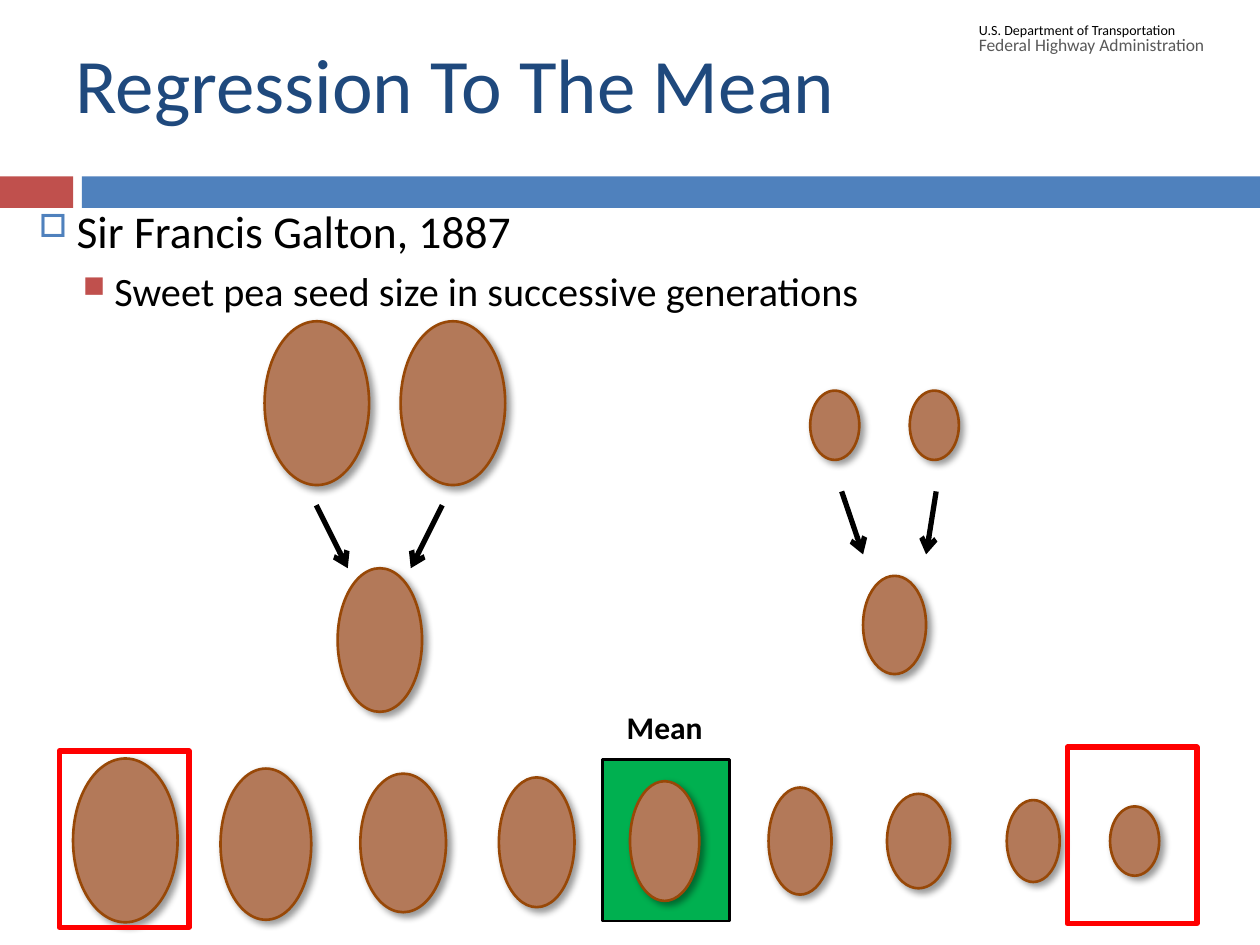
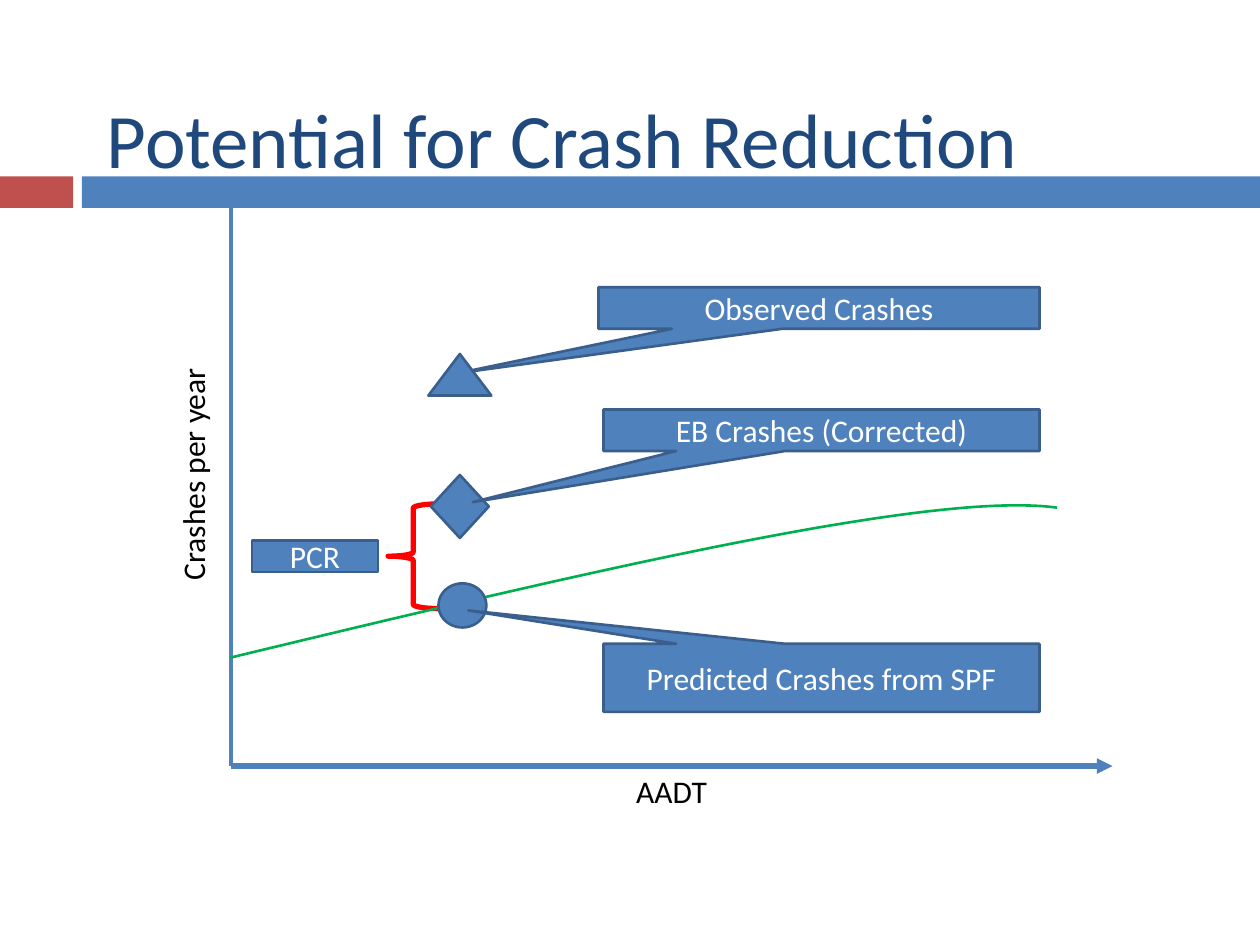
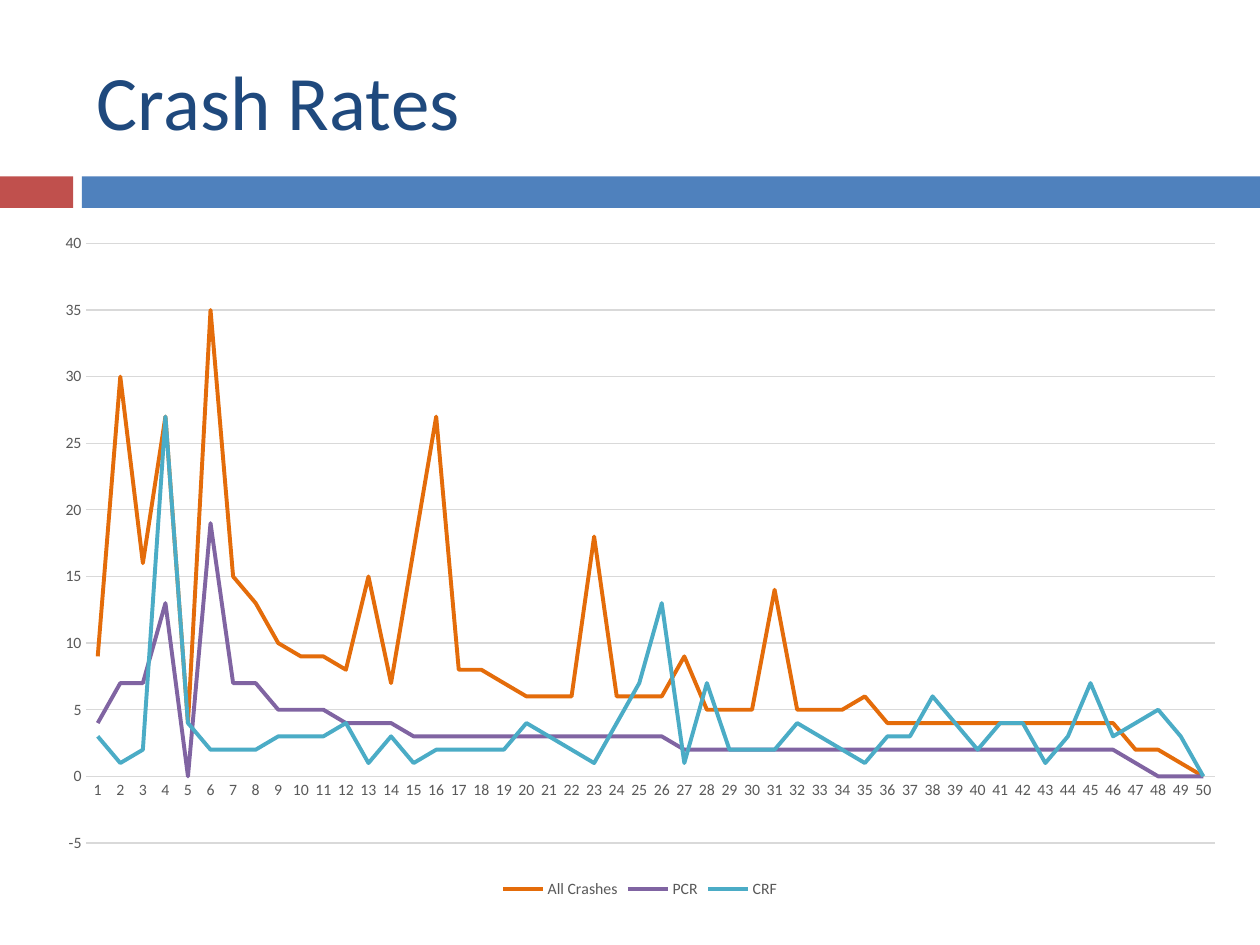
import dataclasses
import typing

import lxml.etree
import pptx
import pptx.chart.data
import pptx.dml.color
import pptx.enum.chart
import pptx.enum.shapes
import pptx.enum.text
import pptx.oxml.ns
import pptx.util

Inches = pptx.util.Inches
Pt = pptx.util.Pt
qn = pptx.oxml.ns.qn
Preset = pptx.enum.shapes.MSO_SHAPE
Align = pptx.enum.text.PP_ALIGN
Anchor = pptx.enum.text.MSO_ANCHOR

FONT = "Calibri"
COLORS = {
    "title": "1F497D",
    "blue": "4F81BD",
    "blue_edge": "3A5F8C",
    "band_red": "C0504D",
    "seed": "B37959",
    "seed_edge": "984807",
    "green": "00B050",
    "red": "FF0000",
    "black": "000000",
    "white": "FFFFFF",
    "gray": "595959",
    "grid": "D9D9D9",
    "orange": "E46C0A",
    "purple": "8064A2",
    "teal": "4BACC6",
}


@dataclasses.dataclass(frozen=True)
class Area:
    left: float
    top: float
    width: float
    height: float

    def lengths(self) -> tuple:
        return tuple(Inches(v) for v in (self.left, self.top, self.width, self.height))


@dataclasses.dataclass(frozen=True)
class Figure:
    preset: typing.Any
    area: Area
    fill: str | None = None
    edge: str | None = None
    weight: float = 1.5
    text: str = ""
    adjustments: tuple[float, ...] = ()


@dataclasses.dataclass(frozen=True)
class Label:
    text: str
    area: Area
    size: float
    color: str = "black"
    bold: bool = False
    align: typing.Any = Align.LEFT
    anchor: typing.Any = Anchor.TOP
    vertical: bool = False


@dataclasses.dataclass(frozen=True)
class Arrow:
    start: tuple[float, float]
    end: tuple[float, float]
    color: str
    weight: float
    head: str


@dataclasses.dataclass(frozen=True)
class Bullet:
    text: str
    size: float
    symbol: str
    color: str
    scale: int
    margin: float
    indent: float
    before: float


@dataclasses.dataclass(frozen=True)
class Series:
    name: str
    color: str
    values: tuple[int, ...]


BANDS = (
    Figure(Preset.RECTANGLE, Area(0, 1.4, 0.58, 0.25), "band_red"),
    Figure(Preset.RECTANGLE, Area(0.65, 1.4, 9.35, 0.25), "blue"),
)

BULLETS = (
    Bullet("Sir Francis Galton, 1887", 26, "□", "blue", 70, 0.7, -0.3, 5.5),
    Bullet("Sweet pea seed size in successive generations", 23, "■", "band_red", 75, 1, -0.25, 5),
)

LARGE, SMALL = (0.83, 1.3), (0.39, 0.55)
FAMILY_SEEDS = (
    Area(2.1, 2.55, *LARGE),
    Area(3.18, 2.55, *LARGE),
    Area(6.43, 3.1, *SMALL),
    Area(7.22, 3.1, *SMALL),
    Area(2.68, 4.51, 0.67, 1.14),
    Area(6.85, 4.57, 0.5, 0.78),
)
SEED_ROW = (
    Area(0.58, 6.02, *LARGE),
    Area(1.75, 6.1, 0.72, 1.2),
    Area(2.86, 6.14, 0.68, 1.1),
    Area(3.96, 6.17, 0.6, 1.03),
    Area(5, 6.2, 0.55, 0.95),
    Area(6.1, 6.25, 0.5, 0.85),
    Area(7.04, 6.3, 0.5, 0.75),
    Area(7.99, 6.35, 0.42, 0.65),
    Area(8.81, 6.4, *SMALL),
)
FAMILY_ARROWS = (
    ((2.51, 4.01), (2.76, 4.51)),
    ((3.51, 4.01), (3.26, 4.51)),
    ((6.68, 3.9), (6.85, 4.4)),
    ((7.43, 3.9), (7.35, 4.4)),
)
MEAN_BOX = Figure(Preset.RECTANGLE, Area(4.78, 6.03, 1.01, 1.28), "green", "black")
EXTREME_FRAMES = tuple(
    Figure(Preset.RECTANGLE, Area(left, top, 1.03, 1.4), None, "red", 3)
    for left, top in ((0.47, 5.96), (8.47, 5.93))
)
GALTON_LABELS = (
    Label("Mean", Area(4.6, 5.57, 1.35, 0.4), 18, bold=True, align=Align.CENTER),
    Label("Federal Highway Administration", Area(7.67, 0.28, 2.36, 0.15), 10, "gray", anchor=Anchor.MIDDLE),
    Label("U.S. Department of Transportation", Area(7.67, 0.16, 2.08, 0.15), 8, anchor=Anchor.MIDDLE),
)

BRACE = Figure(Preset.LEFT_BRACE, Area(3.08, 4, 0.4, 0.83), None, "red", 3)
ORIGIN = (1.83, 6.08)
AXES = (
    Arrow(ORIGIN, (1.83, 1.42), "blue", 2.25, "triangle"),
    Arrow(ORIGIN, (8.83, 6.08), "blue", 3, "triangle"),
)
SPF_CURVE = ((1.83, 5.22), (4.61, 4.55), (7.39, 3.89), (8.39, 4.03))


def blue_figure(preset: typing.Any, area: Area, text: str = "", adjustments: tuple[float, ...] = ()) -> Figure:
    return Figure(preset, area, "blue", "blue_edge", 1.5, text, adjustments)


CALLOUT = Preset.RECTANGULAR_CALLOUT
MARKERS = (
    blue_figure(CALLOUT, Area(4.75, 2.28, 3.5, 0.33), "Observed Crashes", (-0.82, 1.57)),
    blue_figure(Preset.ISOSCELES_TRIANGLE, Area(3.4, 2.81, 0.5, 0.33)),
    blue_figure(Preset.FLOWCHART_DECISION, Area(3.42, 3.77, 0.46, 0.5)),
    blue_figure(Preset.OVAL, Area(3.48, 4.63, 0.38, 0.35)),
    blue_figure(CALLOUT, Area(4.79, 3.25, 3.46, 0.33), "EB Crashes (Corrected)", (-0.8, 1.73)),
    blue_figure(CALLOUT, Area(4.79, 5.11, 3.46, 0.54), "Predicted Crashes from SPF", (-0.81, -0.99)),
    blue_figure(Preset.RECTANGLE, Area(2, 4.29, 1, 0.25), "PCR"),
)
AXIS_LABELS = (
    Label("Crashes per year", Area(1.33, 1.43, 0.5, 4.67), 18, align=Align.CENTER, vertical=True),
    Label("AADT", Area(1.83, 6.08, 7, 0.4), 18, align=Align.CENTER),
)

CRASH_SERIES = (
    Series("All Crashes", "orange", (
        9, 30, 16, 27, 4, 35, 15, 13, 10, 9, 9, 8, 15, 7, 17, 27, 8, 8, 7, 6, 6, 6, 18, 6, 6,
        6, 9, 5, 5, 5, 14, 5, 5, 5, 6, 4, 4, 4, 4, 4, 4, 4, 4, 4, 4, 4, 2, 2, 1, 0)),
    Series("PCR", "purple", (
        4, 7, 7, 13, 0, 19, 7, 7, 5, 5, 5, 4, 4, 4, 3, 3, 3, 3, 3, 3, 3, 3, 3, 3, 3,
        3, 2, 2, 2, 2, 2, 2, 2, 2, 2, 2, 2, 2, 2, 2, 2, 2, 2, 2, 2, 2, 1, 0, 0, 0)),
    Series("CRF", "teal", (
        3, 1, 2, 27, 4, 2, 2, 2, 3, 3, 3, 4, 1, 3, 1, 2, 2, 2, 2, 4, 3, 2, 1, 4, 7,
        13, 1, 7, 2, 2, 2, 4, 3, 2, 1, 3, 3, 6, 4, 2, 4, 4, 1, 3, 7, 3, 4, 5, 3, 0)),
)


def rgb(color: str) -> pptx.dml.color.RGBColor:
    return pptx.dml.color.RGBColor.from_string(COLORS[color])


def style_font(font: typing.Any, size: float, color: str, bold: bool = False) -> None:
    font.name = FONT
    font.size = Pt(size)
    font.bold = bold
    font.color.rgb = rgb(color)


def style_line(line: typing.Any, color: str, weight: float) -> None:
    line.color.rgb = rgb(color)
    line.width = Pt(weight)


def add_span(para: typing.Any, text: str, size: float, color: str, bold: bool = False) -> None:
    span = para.add_run()
    span.text = text
    style_font(span.font, size, color, bold)


def paint(shape: typing.Any, fill: str | None, edge: str | None, weight: float) -> None:
    shape.shadow.inherit = False
    if fill:
        shape.fill.solid()
        shape.fill.fore_color.rgb = rgb(fill)
    else:
        shape.fill.background()
    if edge:
        style_line(shape.line, edge, weight)
    else:
        shape.line.fill.background()


def draw_figure(slide: typing.Any, figure: Figure) -> typing.Any:
    shape = slide.shapes.add_shape(figure.preset, *figure.area.lengths())
    paint(shape, figure.fill, figure.edge, figure.weight)
    for index, value in enumerate(figure.adjustments):
        shape.adjustments[index] = value
    if figure.text:
        frame = shape.text_frame
        frame.word_wrap = True
        frame.vertical_anchor = Anchor.MIDDLE
        para = frame.paragraphs[0]
        para.alignment = Align.CENTER
        add_span(para, figure.text, 18, "white")
    return shape


def draw_label(slide: typing.Any, label: Label) -> None:
    box = slide.shapes.add_textbox(*label.area.lengths())
    frame = box.text_frame
    frame.word_wrap = True
    frame.vertical_anchor = label.anchor
    if label.vertical:
        next(box.element.iter(qn("a:bodyPr"))).set("vert", "vert270")
    para = frame.paragraphs[0]
    para.alignment = label.align
    add_span(para, label.text, label.size, label.color, label.bold)


def draw_arrow(slide: typing.Any, arrow: Arrow) -> None:
    points = [Inches(value) for value in (*arrow.start, *arrow.end)]
    connector = slide.shapes.add_connector(pptx.enum.shapes.MSO_CONNECTOR.STRAIGHT, *points)
    style_line(connector.line, arrow.color, arrow.weight)
    properties = connector.element.spPr
    lxml.etree.SubElement(properties.find(qn("a:ln")), qn("a:tailEnd"), type=arrow.head)
    lxml.etree.SubElement(properties, qn("a:effectLst"))


def draw_seed(slide: typing.Any, area: Area) -> None:
    shape = draw_figure(slide, Figure(Preset.OVAL, area, "seed", "seed_edge"))
    effects = shape.element.spPr.find(qn("a:effectLst"))
    shadow = lxml.etree.SubElement(
        effects, qn("a:outerShdw"),
        blurRad=str(Pt(4)), dist=str(Pt(3)), dir=str(45 * 60000), algn="tl", rotWithShape="0",
    )
    tint = lxml.etree.SubElement(shadow, qn("a:srgbClr"), val=COLORS["black"])
    lxml.etree.SubElement(tint, qn("a:alpha"), val="40000")


def draw_bullets(slide: typing.Any, area: Area, bullets: tuple[Bullet, ...]) -> None:
    frame = slide.shapes.add_textbox(*area.lengths()).text_frame
    frame.word_wrap = True
    for index, bullet in enumerate(bullets):
        para = frame.add_paragraph() if index else frame.paragraphs[0]
        para.level = index
        para.space_before = Pt(bullet.before)
        add_span(para, bullet.text, bullet.size, "black")
        properties = next(para.runs[0].font._element.iterancestors(qn("a:p"))).find(qn("a:pPr"))
        properties.set("marL", str(Inches(bullet.margin)))
        properties.set("indent", str(Inches(bullet.indent)))
        tint = lxml.etree.SubElement(properties, qn("a:buClr"))
        lxml.etree.SubElement(tint, qn("a:srgbClr"), val=COLORS[bullet.color])
        lxml.etree.SubElement(properties, qn("a:buSzPct"), val=str(bullet.scale * 1000))
        lxml.etree.SubElement(properties, qn("a:buChar"), char=bullet.symbol)


def curve_point(controls: tuple, t: float) -> tuple:
    weights = ((1 - t) ** 3, 3 * t * (1 - t) ** 2, 3 * t**2 * (1 - t), t**3)
    return tuple(
        Inches(sum(weight * point[axis] for weight, point in zip(weights, controls)))
        for axis in (0, 1)
    )


def draw_curve(slide: typing.Any, controls: tuple, color: str, steps: int = 60) -> None:
    points = [curve_point(controls, step / steps) for step in range(steps + 1)]
    builder = slide.shapes.build_freeform(*points[0])
    builder.add_line_segments(points[1:], close=False)
    paint(builder.convert_to_shape(), None, color, 1.5)


def draw_crash_chart(slide: typing.Any, area: Area) -> None:
    data = pptx.chart.data.CategoryChartData()
    data.categories = [str(number) for number in range(1, 51)]
    for series in CRASH_SERIES:
        data.add_series(series.name, series.values)
    chart = slide.shapes.add_chart(
        pptx.enum.chart.XL_CHART_TYPE.LINE, *area.lengths(), data
    ).chart
    style_font(chart.font, 10, "black")
    chart.has_title = False
    chart.has_legend = True
    chart.legend.position = pptx.enum.chart.XL_LEGEND_POSITION.BOTTOM
    chart.legend.include_in_layout = False
    style_font(chart.legend.font, 9, "gray")
    for axis in (chart.category_axis, chart.value_axis):
        axis.major_tick_mark = pptx.enum.chart.XL_TICK_MARK.NONE
        axis.minor_tick_mark = pptx.enum.chart.XL_TICK_MARK.NONE
        style_font(axis.tick_labels.font, 9, "gray")
    style_line(chart.category_axis.format.line, "grid", 0.75)
    values = chart.value_axis
    values.minimum_scale, values.maximum_scale, values.major_unit = -5, 40, 5
    values.format.line.fill.background()
    values.has_major_gridlines = True
    style_line(values.major_gridlines.format.line, "grid", 0.75)
    plot = chart.plots[0]
    plot.vary_by_categories = False
    for drawn, series in zip(plot.series, CRASH_SERIES):
        drawn.smooth = False
        drawn.marker.style = pptx.enum.chart.XL_MARKER_STYLE.NONE
        style_line(drawn.format.line, series.color, 2.25)


def add_slide(deck: typing.Any, title: str, area: Area) -> typing.Any:
    slide = deck.slides.add_slide(deck.slide_layouts[6])
    for band in BANDS:
        draw_figure(slide, band)
    draw_label(slide, Label(title, area, 44, "title", anchor=Anchor.MIDDLE))
    return slide


def build_regression(deck: typing.Any) -> None:
    slide = add_slide(deck, "Regression To The Mean", Area(0.5, 0.03, 9, 1.25))
    draw_figure(slide, MEAN_BOX)
    draw_bullets(slide, Area(-0.19, 1.56, 9, 1), BULLETS)
    for start, end in FAMILY_ARROWS:
        draw_arrow(slide, Arrow(start, end, "black", 3, "arrow"))
    for area in FAMILY_SEEDS + SEED_ROW:
        draw_seed(slide, area)
    for frame in EXTREME_FRAMES:
        draw_figure(slide, frame)
    for label in GALTON_LABELS:
        draw_label(slide, label)


def build_reduction(deck: typing.Any) -> None:
    slide = add_slide(deck, "Potential for Crash Reduction", Area(0.75, 0.21, 8.5, 1.76))
    draw_figure(slide, BRACE)
    for axis in AXES:
        draw_arrow(slide, axis)
    draw_curve(slide, SPF_CURVE, "green")
    for marker in MARKERS:
        draw_figure(slide, marker)
    for label in AXIS_LABELS:
        draw_label(slide, label)


def build_rates(deck: typing.Any) -> None:
    slide = add_slide(deck, "Crash Rates", Area(0.67, 0.25, 8.92, 1.08))
    draw_crash_chart(slide, Area(0.33, 1.75, 9.5, 5.42))


def main() -> None:
    deck = pptx.Presentation()
    deck.slide_width = Inches(10)
    deck.slide_height = Inches(7.5)
    build_regression(deck)
    build_reduction(deck)
    build_rates(deck)
    deck.save("out.pptx")


if __name__ == "__main__":
    main()
